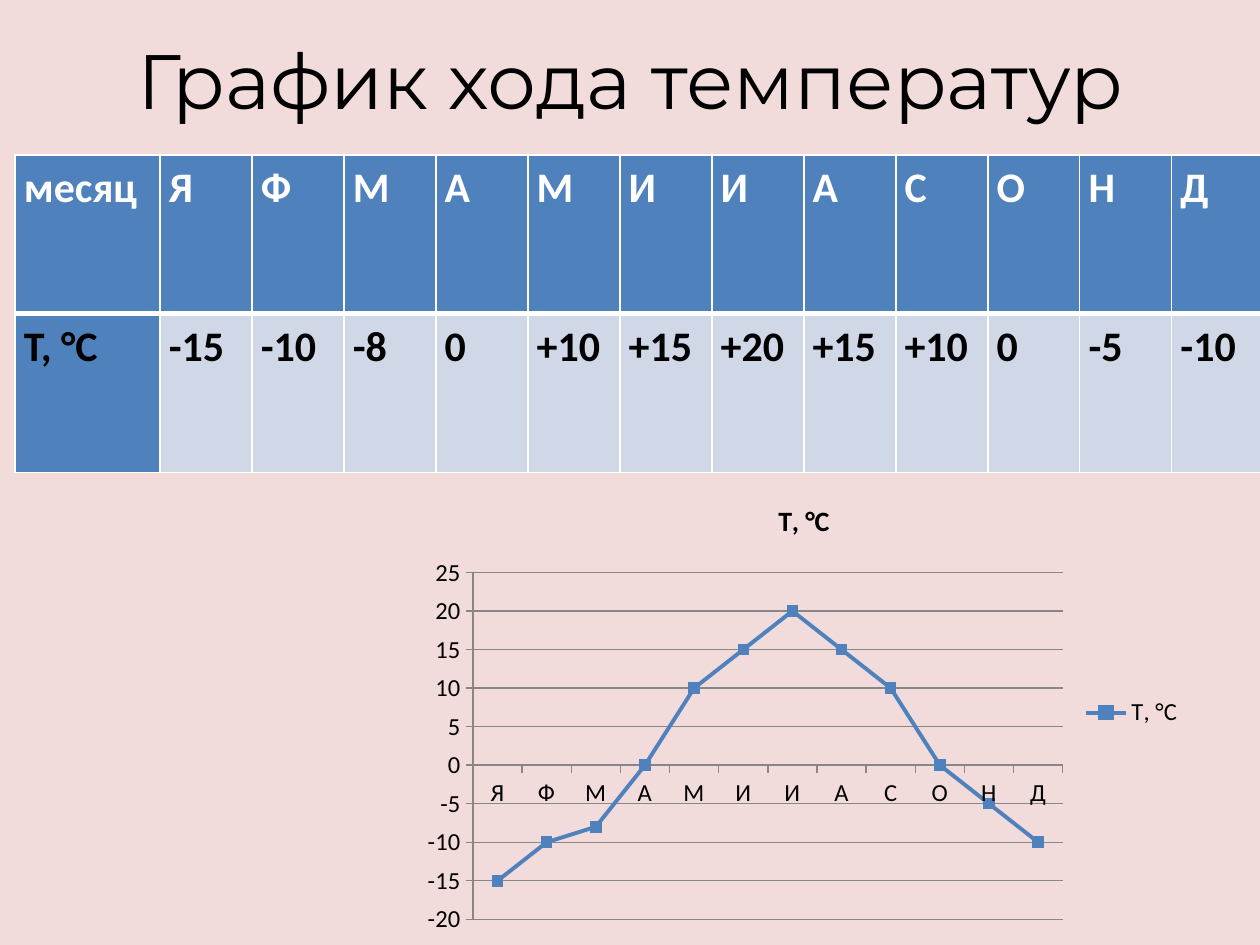
from dataclasses import dataclass

from lxml.etree import SubElement
from pptx import Presentation
from pptx.chart.data import CategoryChartData
from pptx.dml.color import RGBColor
from pptx.enum.chart import XL_CHART_TYPE, XL_LEGEND_POSITION, XL_MARKER_STYLE, XL_TICK_MARK
from pptx.enum.text import MSO_ANCHOR, PP_ALIGN
from pptx.oxml.ns import qn
from pptx.util import Inches, Pt


@dataclass(frozen=True)
class Theme:
    background: str = "F2DCDB"
    accent: str = "4F81BD"
    band: str = "D0D8E8"
    light: str = "FFFFFF"
    dark: str = "000000"
    axis: str = "878787"
    title_font: str = "Montserrat"
    body_font: str = "Calibri"
    title_size: int = 44
    table_size: int = 24
    chart_title_size: int = 16
    chart_size: int = 14


def rgb(value):
    return RGBColor.from_string(value)


class SlideBuilder:
    def __init__(self, prs, theme):
        self.theme = theme
        self.s = prs.slides.add_slide(prs.slide_layouts[6])
        fill = self.s.background.fill
        fill.solid()
        fill.fore_color.rgb = rgb(theme.background)

    def style_font(self, font, size, color, name=None, bold=False):
        font.name = name or self.theme.body_font
        font.size = Pt(size)
        font.bold = bold
        font.color.rgb = rgb(color)

    def title(self, text, box):
        tf = self.s.shapes.add_textbox(*map(Inches, box)).text_frame
        tf.word_wrap = True
        tf.vertical_anchor = MSO_ANCHOR.MIDDLE
        tf.text = text
        p = tf.paragraphs[0]
        p.alignment = PP_ALIGN.CENTER
        self.style_font(p.runs[0].font, self.theme.title_size, self.theme.dark,
                        self.theme.title_font)

    def borders(self, cell, widths):
        # Border elements must come before the cell fill
        tc_pr = cell._tc.get_or_add_tcPr()
        for i, (side, width) in enumerate(zip("LRTB", widths)):
            ln = SubElement(tc_pr, qn(f"a:ln{side}"), w=str(Pt(width)))
            fill = SubElement(ln, qn("a:solidFill"))
            SubElement(fill, qn("a:srgbClr"), val=self.theme.light)
            tc_pr.insert(i, ln)

    def cell(self, cell, text, fill, color, widths):
        cell.margin_left = cell.margin_right = Inches(0.07)
        cell.margin_top = cell.margin_bottom = 0
        cell.fill.solid()
        cell.fill.fore_color.rgb = rgb(fill)
        self.borders(cell, widths)
        cell.text = text
        p = cell.text_frame.paragraphs[0]
        p.line_spacing = 1.15
        p.space_after = Pt(10)
        self.style_font(p.runs[0].font, self.theme.table_size, color, bold=True)

    def table(self, header, values, box, first_width, column_width):
        t = self.theme
        table = self.s.shapes.add_table(2, len(header), *map(Inches, box)).table
        for c, (month, value) in enumerate(zip(header, values)):
            table.columns[c].width = Inches(column_width if c else first_width)
            self.cell(table.cell(0, c), month, t.accent, t.light, (1, 1, 1, 3))
            self.cell(table.cell(1, c), value, t.band if c else t.accent, t.dark, (1, 1, 3, 1))

    def line_chart(self, name, categories, values, box):
        t = self.theme
        data = CategoryChartData()
        data.categories = categories
        data.add_series(name, values)
        chart = self.s.shapes.add_chart(XL_CHART_TYPE.LINE_MARKERS,
                                        *map(Inches, box), data).chart
        self.style_font(chart.font, t.chart_size, t.dark)

        # Title and legend
        tf = chart.chart_title.text_frame
        tf.text = name
        self.style_font(tf.paragraphs[0].runs[0].font, t.chart_title_size, t.dark, bold=True)
        chart.has_legend = True
        chart.legend.position = XL_LEGEND_POSITION.RIGHT
        chart.legend.include_in_layout = False

        # Axes and gridlines
        chart.category_axis.has_major_gridlines = False
        chart.value_axis.has_major_gridlines = True
        lines = [chart.value_axis.major_gridlines.format.line]
        for axis in (chart.category_axis, chart.value_axis):
            axis.major_tick_mark = XL_TICK_MARK.OUTSIDE
            lines.append(axis.format.line)
        for line in lines:
            line.color.rgb = rgb(t.axis)
            line.width = Pt(0.75)
        chart.value_axis.minimum_scale = -20
        chart.value_axis.maximum_scale = 25
        chart.value_axis.major_unit = 5

        # Temperature line
        plot = chart.plots[0]
        plot.vary_by_categories = False
        series = plot.series[0]
        series.smooth = False
        series.format.line.color.rgb = rgb(t.accent)
        series.format.line.width = Pt(2.25)
        marker = series.marker
        marker.style = XL_MARKER_STYLE.SQUARE
        marker.size = 6
        marker.format.fill.solid()
        marker.format.fill.fore_color.rgb = rgb(t.accent)
        marker.format.line.color.rgb = rgb(t.accent)


def main():
    prs = Presentation()
    prs.slide_width, prs.slide_height = Inches(10), Inches(7.5)
    slide = SlideBuilder(prs, Theme())

    months = list("ЯФМАМИИАСОНД")
    temperatures = [-15, -10, -8, 0, 10, 15, 20, 15, 10, 0, -5, -10]
    label = "T, °С"
    signed = [f"{v:+d}" if v else "0" for v in temperatures]

    slide.title("График хода температур", (0.51, 0, 9, 1.25))
    slide.table(["месяц"] + months, [label] + signed, (0.12, 1.23, 9.88, 2.52), 1.15, 0.73)
    slide.line_chart(label, months, temperatures, (3.27, 3.82, 6.22, 3.67))
    prs.save("out.pptx")


if __name__ == "__main__":
    main()
